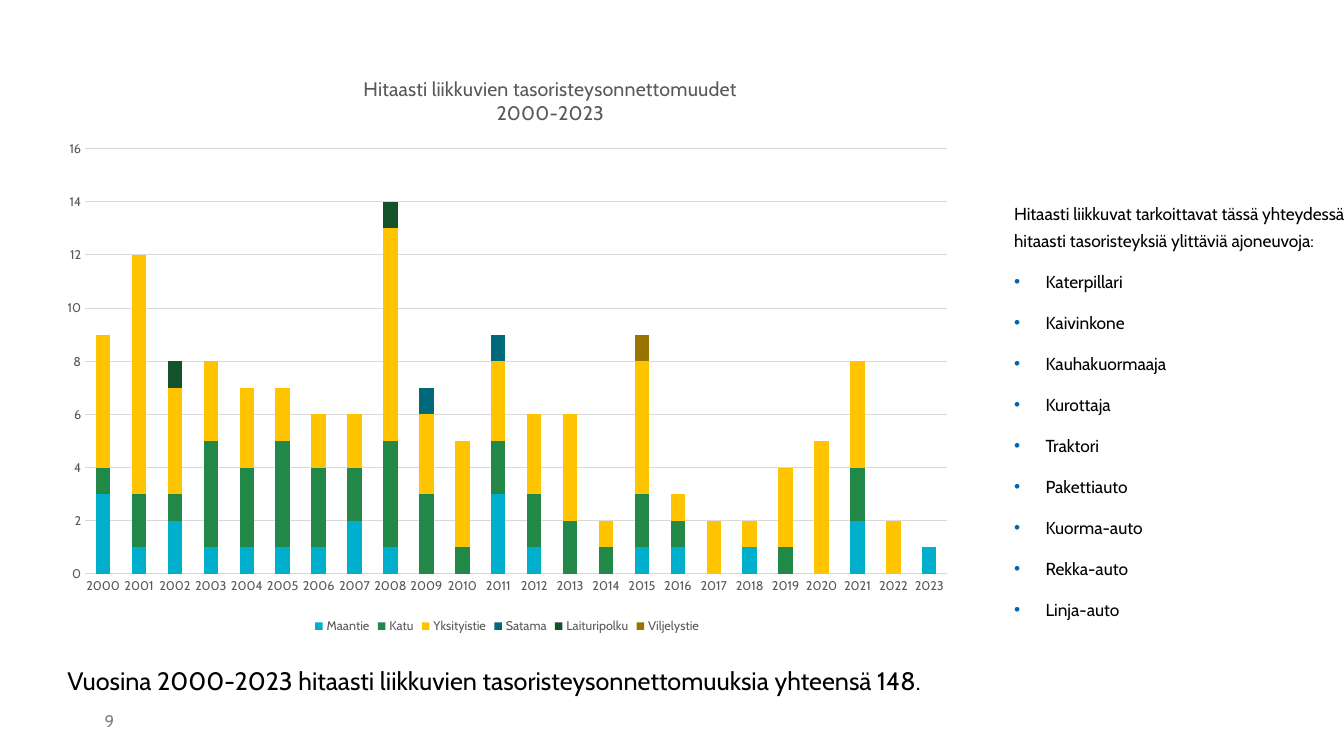
"""Build the slide on level crossing accidents of slow vehicles, 2000-2023."""
from dataclasses import dataclass

import pptx
import pptx.chart.data
import pptx.dml.color
import pptx.enum.chart
import pptx.enum.text
import pptx.oxml.ns
import pptx.oxml.xmlchemy
import pptx.util

Pt = pptx.util.Pt
RGBColor = pptx.dml.color.RGBColor
qn = pptx.oxml.ns.qn
new_element = pptx.oxml.xmlchemy.OxmlElement

FONT = "Cabin"
BLACK = RGBColor(0x00, 0x00, 0x00)
GREY = RGBColor(0x80, 0x80, 0x80)
CHART_GREY = RGBColor(0x59, 0x59, 0x59)
GRID_GREY = RGBColor(0xD9, 0xD9, 0xD9)
BULLET_BLUE = RGBColor(0x00, 0x65, 0xAF)
CYAN = RGBColor(0x00, 0xAF, 0xCB)
GREEN = RGBColor(0x22, 0x88, 0x48)
YELLOW = RGBColor(0xFF, 0xC3, 0x00)
TEAL = RGBColor(0x00, 0x69, 0x7A)
DARK_GREEN = RGBColor(0x14, 0x52, 0x2B)
BROWN = RGBColor(0x99, 0x75, 0x00)

YEARS = range(2000, 2024)
INTRO = "Hitaasti liikkuvat tarkoittavat tässä yhteydessä hitaasti tasoristeyksiä ylittäviä ajoneuvoja:"
VEHICLES = ["Katerpillari", "Kaivinkone", "Kauhakuormaaja", "Kurottaja", "Traktori",
            "Pakettiauto", "Kuorma-auto", "Rekka-auto", "Linja-auto"]
CHART_TITLE = "Hitaasti liikkuvien tasoristeysonnettomuudet\n2000-2023"


@dataclass(frozen=True)
class RoadType:
    name: str
    color: RGBColor
    counts: list[int]


@dataclass(frozen=True)
class Label:
    text: str
    left: float
    top: float
    width: float
    height: float
    size: float
    color: RGBColor
    anchor: pptx.enum.text.MSO_ANCHOR
    wrap: bool


def single_accidents(*years: int) -> list[int]:
    return [int(year in years) for year in YEARS]


ROAD_TYPES = [
    RoadType("Maantie", CYAN,
             [3, 1, 2, 1, 1, 1, 1, 2, 1, 0, 0, 3, 1, 0, 0, 1, 1, 0, 1, 0, 0, 2, 0, 1]),
    RoadType("Katu", GREEN,
             [1, 2, 1, 4, 3, 4, 3, 2, 4, 3, 1, 2, 2, 2, 1, 2, 1, 0, 0, 1, 0, 2, 0, 0]),
    RoadType("Yksityistie", YELLOW,
             [5, 9, 4, 3, 3, 2, 2, 2, 8, 3, 4, 3, 3, 4, 1, 5, 1, 2, 1, 3, 5, 4, 2, 0]),
    RoadType("Satama", TEAL, single_accidents(2009, 2011)),
    RoadType("Laituripolku", DARK_GREEN, single_accidents(2002, 2008)),
    RoadType("Viljelystie", BROWN, single_accidents(2015)),
]

LABELS = [
    Label("9", 67.7, 500.4, 43.9, 28.8, 12, GREY, pptx.enum.text.MSO_ANCHOR.MIDDLE, True),
    Label("Vuosina 2000-2023 hitaasti liikkuvien tasoristeysonnettomuuksia yhteensä 148.",
          41, 471.6, 655.2, 28.8, 18, BLACK, pptx.enum.text.MSO_ANCHOR.TOP, False),
]


def set_values(target: object, values: dict) -> None:
    for name, value in values.items():
        setattr(target, name, value)


def style_font(font: object, size: float, color: RGBColor) -> None:
    set_values(font, {"name": FONT, "size": Pt(size), "bold": False})
    font.color.rgb = color


def place(box: object, left: float, top: float, width: float, height: float) -> None:
    set_values(box, {"left": Pt(left), "top": Pt(top), "width": Pt(width), "height": Pt(height)})


def add_label(page: object, label: Label) -> None:
    box = page.shapes.add_textbox(Pt(label.left), Pt(label.top), Pt(label.width), Pt(label.height))
    set_values(box.text_frame, {"word_wrap": label.wrap, "vertical_anchor": label.anchor})
    span = box.text_frame.paragraphs[0].add_run()
    span.text = label.text
    style_font(span.font, label.size, label.color)


def set_bullet(para: object, bulleted: bool) -> None:
    properties = para._p.get_or_add_pPr()
    indent = Pt(22.5) if bulleted else 0
    properties.set("marL", str(indent))
    properties.set("indent", str(-indent))
    if not bulleted:
        properties.append(new_element("a:buNone"))
        return
    color = new_element("a:buClr")
    value = new_element("a:srgbClr")
    value.set("val", str(BULLET_BLUE))
    color.append(value)
    font = new_element("a:buFont")
    font.set("typeface", "Arial")
    mark = new_element("a:buChar")
    mark.set("char", "•")
    properties.extend([color, font, mark])


def fill_vehicle_list(box: object) -> None:
    place(box, 717.1, 136.8, 251.3, 344.2)
    frame = box.text_frame
    set_values(frame, {"word_wrap": True, "auto_size": pptx.enum.text.MSO_AUTO_SIZE.NONE,
                       "vertical_anchor": pptx.enum.text.MSO_ANCHOR.TOP})
    for index, text in enumerate([INTRO, *VEHICLES]):
        para = frame.add_paragraph() if index else frame.paragraphs[0]
        set_values(para, {"line_spacing": 1.3, "space_before": Pt(10 if index else 0),
                          "space_after": Pt(0), "alignment": pptx.enum.text.PP_ALIGN.LEFT})
        set_bullet(para, index > 0)
        span = para.add_run()
        span.text = text
        style_font(span.font, 12.4, BLACK)


def set_layout(element: object, values: dict) -> None:
    layout = element.find(qn("c:layout"))
    if layout is None:
        layout = new_element("c:layout")
        element.insert(0, layout)
    manual = new_element("c:manualLayout")
    for name, value in values.items():
        item = new_element(f"c:{name}")
        item.set("val", str(value))
        manual.append(item)
    layout.append(manual)


def style_axes(chart: object) -> None:
    for axis in (chart.category_axis, chart.value_axis):
        set_values(axis, {"major_tick_mark": pptx.enum.chart.XL_TICK_MARK.NONE,
                          "minor_tick_mark": pptx.enum.chart.XL_TICK_MARK.NONE})
        style_font(axis.tick_labels.font, 9, CHART_GREY)
    set_values(chart.value_axis, {"minimum_scale": 0, "maximum_scale": 16, "major_unit": 2,
                                  "has_major_gridlines": True})
    chart.value_axis.format.line.fill.background()
    for line in (chart.category_axis.format.line, chart.value_axis.major_gridlines.format.line):
        line.width = Pt(0.75)
        line.color.rgb = GRID_GREY


def add_accident_chart(page: object) -> None:
    data = pptx.chart.data.CategoryChartData()
    data.categories = [str(year) for year in YEARS]
    for road in ROAD_TYPES:
        data.add_series(road.name, road.counts)
    chart = page.shapes.add_chart(pptx.enum.chart.XL_CHART_TYPE.COLUMN_STACKED,
                                  Pt(34.6), Pt(39.6), Pt(655.2), Pt(416.2), data).chart
    style_font(chart.font, 10, BLACK)
    set_values(chart, {"has_title": True, "has_legend": True})
    title = chart.chart_title
    title.text_frame.text = CHART_TITLE
    for para in title.text_frame.paragraphs:
        style_font(para.runs[0].font, 14, CHART_GREY)
    position = {"xMode": "edge", "yMode": "edge"}
    title_element = chart.element.find(f".//{qn('c:title')}")
    set_layout(title_element, {**position, "x": 0.34, "y": 0.03})
    title_element.insert(1, title_element.find(qn("c:layout")))
    set_layout(chart.element.find(f".//{qn('c:plotArea')}"),
               {"layoutTarget": "inner", **position, "x": 0.04, "y": 0.16, "w": 0.94, "h": 0.73})
    set_values(chart.legend, {"position": pptx.enum.chart.XL_LEGEND_POSITION.BOTTOM,
                              "include_in_layout": False})
    style_font(chart.legend.font, 9, CHART_GREY)
    style_axes(chart)
    plot = chart.plots[0]
    set_values(plot, {"gap_width": 150, "overlap": 100, "vary_by_categories": False})
    for series, road in zip(plot.series, ROAD_TYPES):
        series.format.fill.solid()
        series.format.fill.fore_color.rgb = road.color


def main() -> None:
    deck = pptx.Presentation()
    set_values(deck, {"slide_width": Pt(960), "slide_height": Pt(540)})
    page = deck.slides.add_slide(deck.slide_layouts[1])
    heading = page.shapes.title.element
    heading.getparent().remove(heading)
    fill_vehicle_list(page.placeholders[1])
    for label in LABELS:
        add_label(page, label)
    add_accident_chart(page)
    deck.save("out.pptx")


if __name__ == "__main__":
    main()
